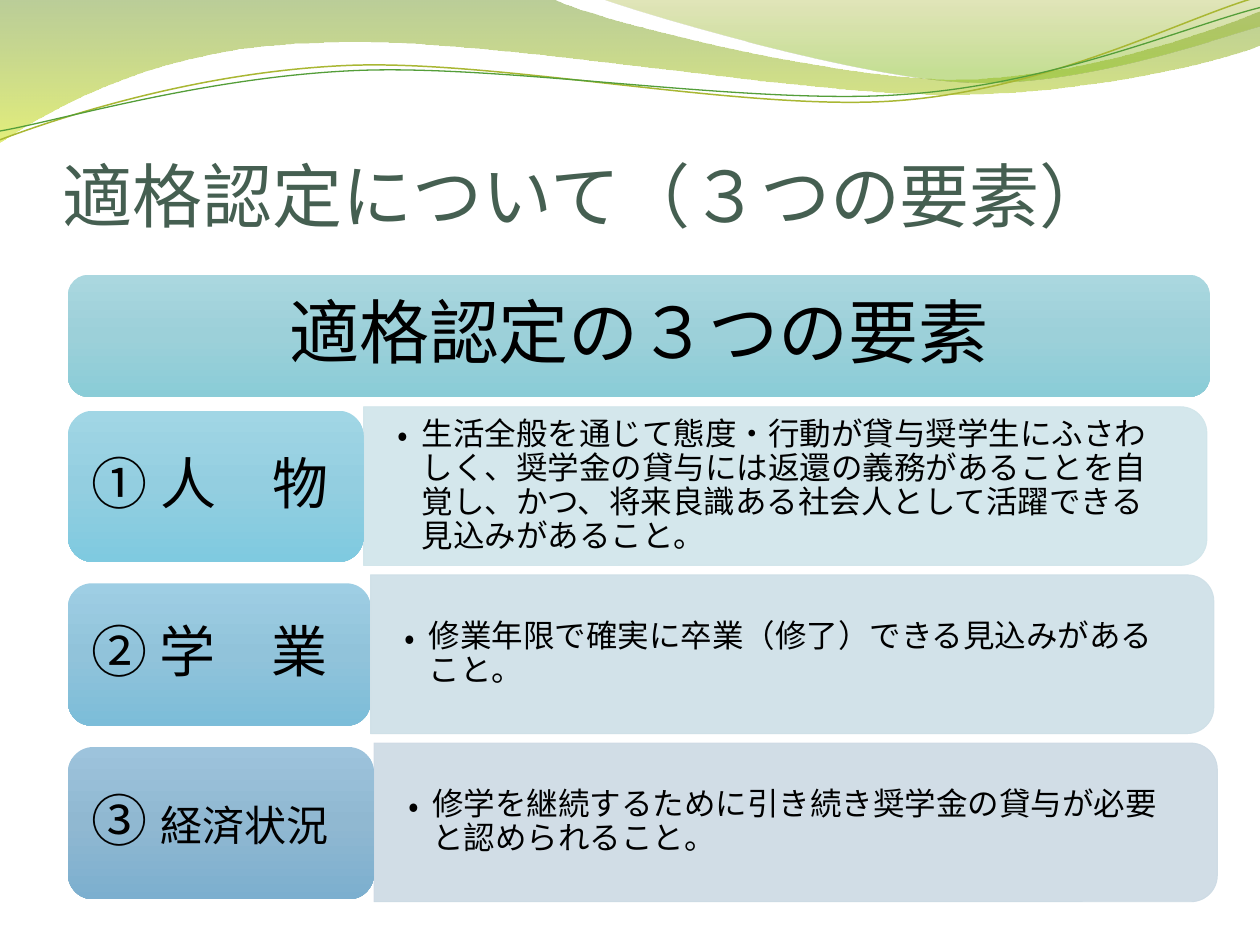
from lxml.etree import SubElement
from pptx import Presentation
from pptx.dml.color import RGBColor
from pptx.enum.shapes import MSO_SHAPE as SHAPE
from pptx.enum.text import MSO_ANCHOR as ANCHOR, PP_ALIGN as ALIGN
from pptx.oxml.ns import qn
from pptx.util import Cm, Pt

FONT = "Noto Sans CJK JP"
BLACK = "000000"

# Wave points are in thousandths of the band's width: start, then segments
# of one point (line) or three points (Bézier curve).
WAVE_FILLS = [
    ([(0, 0), [(440, 0)],
      [(475, 17), (663, 63), (758, 63)], [(853, 63), (958, 26), (1000, 9)],
      [(1000, 36)],
      [(983, 44), (869, 76), (746, 75)], [(622, 75), (381, 28), (257, 34)],
      [(129, 36), (46, 83), (0, 113)]],
     [(0, "69921C", 45), (100, "CCE10F", 55)]),
    ([(479, 0), [(509, 11), (682, 62), (768, 65)],
      [(855, 69), (961, 32), (1000, 21)], [(1000, 0)]],
     [(0, "9BAA1A", 30), (80, "81BA16", 45)]),
]
WAVE_LINES = [
    ([(0, 111), [(48, 93), (157, 57), (276, 52)],
      [(395, 47), (592, 89), (712, 80)], [(833, 71), (938, 15), (997, -2)]],
     "A9B733", 0.85),
    ([(0, 104), [(47, 96), (163, 61), (283, 56)],
      [(402, 51), (597, 84), (717, 75)], [(836, 67), (941, 21), (1000, 6)]],
     "549E39", 0.75),
]

# Label top, width and height (cm), alignment, runs, gradient, detail colour, detail
ROWS = [
    (8.28, 5.96, 3.05, ALIGN.LEFT, [("① 人　物", 32)],
     ("A1D6E5", "93CEE0", "7FCAE0"), "D0E5EA",
     "生活全般を通じて態度・行動が貸与奨学生にふさわしく、奨学金の貸与には返還の義務があることを自覚し、"
     "かつ、将来良識ある社会人として活躍できる見込みがあること。"),
    (11.76, 6.1, 2.87, ALIGN.LEFT, [("② 学　業", 32)],
     ("9ECEE4", "91C3DA", "7CBDD9"), "CEDFE7",
     "修業年限で確実に卒業（修了）できる見込みがあること。"),
    (15.06, 6.17, 3.07, ALIGN.JUSTIFY, [("③ ", 32), ("経済状況", 24)],
     ("9DC3DC", "90B8D1", "7CAFCF"), "CCDAE4",
     "修学を継続するために引き続き奨学金の貸与が必要と認められること。"),
]


def rgb(value):
    return RGBColor.from_string(value)


def set_alpha(color, percent):
    SubElement(color, qn("a:alpha"), val=str(percent * 1000))


def fill_gradient(sp, stops):
    """Fill from top to bottom with (position, colour, opacity) stops."""
    sp.fill.gradient()
    sp.fill.gradient_angle = 270
    gs_list = sp._element.spPr.find(".//" + qn("a:gsLst"))
    for gs in list(gs_list):
        gs_list.remove(gs)
    for pos, color, alpha in stops:
        gs = SubElement(gs_list, qn("a:gs"), pos=str(pos * 1000))
        clr = SubElement(gs, qn("a:srgbClr"), val=color)
        if alpha < 100:
            set_alpha(clr, alpha)


def write(sp, runs, color=BLACK, inset=(0, 0), bullet=False, frame=None, para=None):
    """Put one paragraph of (text, size) runs into a shape."""
    tf = sp.text_frame
    x, y = (Cm(v) for v in inset)
    frame_format = {"word_wrap": True, "vertical_anchor": ANCHOR.MIDDLE,
                    "margin_left": x, "margin_right": x,
                    "margin_top": y, "margin_bottom": y, **(frame or {})}
    for name, value in frame_format.items():
        setattr(tf, name, value)
    p = tf.paragraphs[0]
    for name, value in {"alignment": ALIGN.LEFT, "line_spacing": 0.9, **(para or {})}.items():
        setattr(p, name, value)
    if bullet:
        p.level = 1
        pPr = p._p.get_or_add_pPr()
        pPr.set("marL", str(Cm(0.48)))
        pPr.set("indent", str(-Cm(0.48)))
        SubElement(pPr, qn("a:buFont"), typeface=FONT)
        SubElement(pPr, qn("a:buChar"), char="•")
    for text, size in runs:
        r = p.add_run()
        r.text = text
        for name, value in {"name": FONT, "size": Pt(size)}.items():
            setattr(r.font, name, value)
        r.font.color.rgb = rgb(color)
        SubElement(r._r.get_or_add_rPr(), qn("a:ea"), typeface=FONT)


def add_panel(s, kind, x, y, w, h):
    sp = s.shapes.add_shape(kind, Cm(x), Cm(y), Cm(w), Cm(h))
    sp.shadow.inherit = False
    sp.line.fill.background()
    return sp


def add_gradient_box(s, box, colors):
    sp = add_panel(s, SHAPE.ROUNDED_RECTANGLE, *box)
    fill_gradient(sp, [(pos, c, 100) for pos, c in zip((0, 50, 100), colors)])
    return sp


def bend(sp, segments):
    """Join each three line points of a freeform into one Bézier curve."""
    lines = iter(sp._element.spPr.findall(".//" + qn("a:lnTo")))
    for seg in segments:
        first, *others = [next(lines) for _ in seg]
        if others:
            curve = first.makeelement(qn("a:cubicBezTo"))
            first.addprevious(curve)
            for line in (first, *others):
                curve.append(line[0])
                line.getparent().remove(line)


def add_waves(s, x, y, w):
    def add_wave(path, close):
        start, *segments = path
        builder = s.shapes.build_freeform(*start, scale=Cm(w) / 1000)
        builder.add_line_segments(sum(segments, []), close=close)
        sp = builder.convert_to_shape(Cm(x), Cm(y))
        bend(sp, segments)
        sp.shadow.inherit = False
        return sp

    for path, stops in WAVE_FILLS:
        sp = add_wave(path, True)
        fill_gradient(sp, stops)
        sp.line.fill.background()
    for path, color, width in WAVE_LINES:
        sp = add_wave(path, False)
        sp.fill.background()
        sp.line.color.rgb = rgb(color)
        sp.line.width = Pt(width)


def add_title(s, x, y, w, h):
    sp = s.shapes.add_textbox(Cm(x), Cm(y), Cm(w), Cm(h))
    write(sp, [("適格認定について（３つの要素）", 40)], "455F51",
          frame={"vertical_anchor": ANCHOR.BOTTOM, "margin_top": Cm(0.13)},
          para={"line_spacing": 0.8})


def add_header(s, *box):
    sp = add_gradient_box(s, box, ("AAD7DF", "9CD0D9", "8ACCD7"))
    write(sp, [("適格認定の３つの要素", 40)], inset=(0.43, 0.2),
          para={"alignment": ALIGN.CENTER, "space_after": Pt(14)})


def add_detail(s, x, y, w, h, color, text):
    # A quarter turn about the centre brings the rounded corners to the right.
    sp = add_panel(s, SHAPE.ROUND_2_SAME_RECTANGLE, x + (w - h) / 2, y + (h - w) / 2, h, w)
    sp.rotation = 90
    sp.fill.solid()
    sp.fill.fore_color.rgb = rgb(color)
    sp.line.color.rgb = rgb(color)
    sp.line.width = Pt(0.5)
    for clr in sp._element.spPr.iter(qn("a:srgbClr")):
        set_alpha(clr, 90)
    tb = s.shapes.add_textbox(Cm(x), Cm(y + 0.16), Cm(w - 0.16), Cm(h - 0.32))
    write(tb, [(text, 18)], inset=(0.69, 0.36), bullet=True, para={"space_after": Pt(2.7)})


def add_rows(s, x, y, w, h, pitch):
    for i, (top, label_w, label_h, align, runs, colors, tint, text) in enumerate(ROWS):
        add_detail(s, x + label_w, y + i * pitch, w, h, tint, text)
        sp = add_gradient_box(s, (x, top, label_w, label_h), colors)
        write(sp, runs, inset=(0.33, 0.18),
              para={"alignment": align, "space_after": Pt(11.2)})


def main():
    prs = Presentation()
    prs.slide_width, prs.slide_height = Cm(25.4), Cm(19.05)
    s = prs.slides.add_slide(prs.slide_layouts[6])
    add_waves(s, 0, 0, 25.4)
    add_title(s, 1.27, 1.57, 22.86, 3.18)
    add_header(s, 1.37, 5.54, 23.02, 2.46)
    add_rows(s, 1.37, 8.2, 17, 3.2, 3.39)
    prs.save("out.pptx")


if __name__ == "__main__":
    main()
